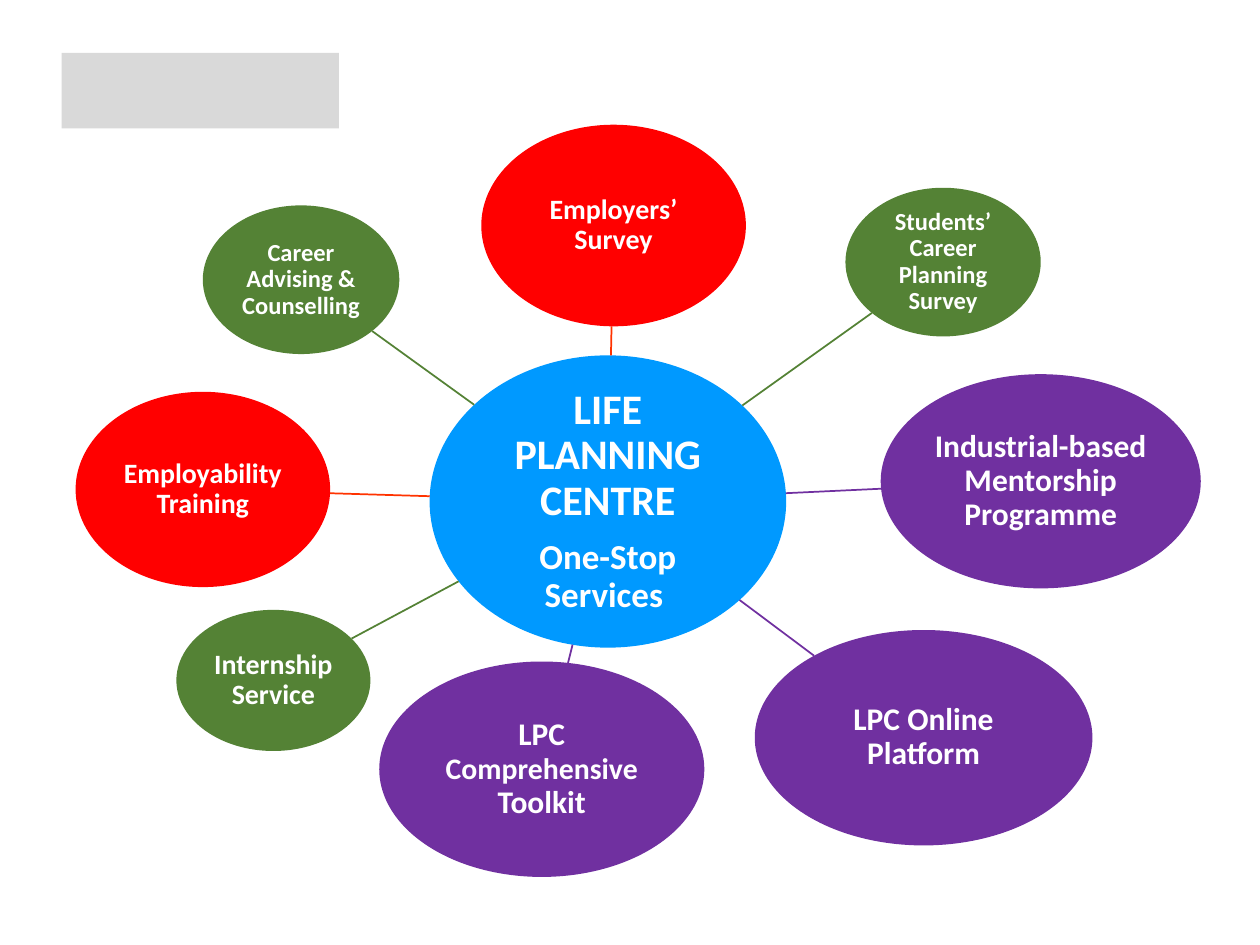
from collections import namedtuple
from dataclasses import dataclass
from math import hypot

from pptx import Presentation
from pptx.dml.color import RGBColor
from pptx.enum import shapes, text
from pptx.oxml.ns import qn
from pptx.util import Inches, Pt
from lxml import etree


@dataclass(frozen=True)
class Theme:
    hub: str = "0099FF"
    red: str = "FF0000"
    red_spoke: str = "FF3300"
    green: str = "548235"
    purple: str = "7030A0"
    placeholder: str = "D9D9D9"
    white: str = "FFFFFF"
    font: str = "Calibri"
    hub_name: int = 24
    hub_tagline: int = 20
    large: int = 18
    long_word: int = 17
    medium: int = 16
    small: int = 14


THEME = Theme()
Box = namedtuple("Box", "left top width height")
EMBLEM = Box(0.49, 0.42, 2.2, 0.6)
HUB = Box(3.41, 2.82, 2.83, 2.32)

# Each service: oval, fill, spoke colour, [(words, size), ...]
SERVICES = [
    (Box(3.82, 0.99, 2.1, 1.6), THEME.red, THEME.red_spoke,
     [("Employers’ Survey", THEME.medium)]),
    (Box(6.71, 1.49, 1.55, 1.18), THEME.green, THEME.green,
     [("Students’ Career Planning Survey", THEME.small)]),
    (Box(6.99, 2.97, 2.54, 1.7), THEME.purple, THEME.purple,
     [("Industrial-based Mentorship Programme", THEME.large)]),
    (Box(5.99, 5, 2.68, 1.71), THEME.purple, THEME.purple,
     [("LPC Online Platform", THEME.large)]),
    (Box(1.4, 4.84, 1.54, 1.12), THEME.green, THEME.green,
     [("Internship Service", THEME.medium)]),
    (Box(3.01, 5.25, 2.58, 1.71), THEME.purple, THEME.purple,
     [("LPC ", THEME.large), ("Comprehensive", THEME.long_word),
      (" Toolkit", THEME.large)]),
    (Box(0.6, 3.11, 2.02, 1.55), THEME.red, THEME.red_spoke,
     [("Employability Training", THEME.medium)]),
    (Box(1.61, 1.63, 1.56, 1.18), THEME.green, THEME.green,
     [("Career Advising & Counselling", THEME.small)]),
]


def add_filled_shape(slide, preset, box, fill):
    shape = slide.shapes.add_shape(preset, *(Inches(value) for value in box))
    shape.shadow.inherit = False
    shape.fill.solid()
    shape.fill.fore_color.rgb = RGBColor.from_string(fill)
    shape.line.fill.background()
    return shape


def add_words(paragraph, words, size):
    run = paragraph.add_run()
    run.text = words
    run.font.name = THEME.font
    run.font.size = Pt(size)
    run.font.bold = True
    run.font.color.rgb = RGBColor.from_string(THEME.white)


def add_oval(slide, oval, fill, paragraphs, inset):
    """Add a filled oval; each paragraph is a list of (words, size)."""
    shape = add_filled_shape(slide, shapes.MSO_SHAPE.OVAL, oval, fill)
    frame = shape.text_frame
    frame.word_wrap = True
    frame.vertical_anchor = text.MSO_ANCHOR.MIDDLE
    frame.margin_left = frame.margin_right = Inches(inset)
    frame.margin_top = frame.margin_bottom = Inches(inset)
    for index, parts in enumerate(paragraphs):
        paragraph = frame.add_paragraph() if index else frame.paragraphs[0]
        paragraph.alignment = text.PP_ALIGN.CENTER
        paragraph.line_spacing = 0.9
        paragraph.space_after = Pt(0.35 * parts[0][1])
        for words, size in parts:
            add_words(paragraph, words, size)


def center(oval):
    return oval.left + oval.width / 2, oval.top + oval.height / 2


def edge_point(oval, target):
    """Point where the ray from the oval's centre to target meets its edge."""
    x, y = center(oval)
    dx, dy = target[0] - x, target[1] - y
    scale = 1 / hypot(dx / (oval.width / 2), dy / (oval.height / 2))
    return Inches(x + dx * scale), Inches(y + dy * scale)


def add_spoke(slide, service, color):
    start = edge_point(HUB, center(service))
    end = edge_point(service, center(HUB))
    spoke = slide.shapes.add_connector(
        shapes.MSO_CONNECTOR.STRAIGHT, *start, *end)
    spoke.line.color.rgb = RGBColor.from_string(color)
    spoke.line.width = Pt(1)
    etree.SubElement(spoke._element.spPr, qn("a:effectLst"))


def main():
    prs = Presentation()
    prs.slide_width, prs.slide_height = Inches(10), Inches(7.5)
    slide = prs.slides.add_slide(prs.slide_layouts.get_by_name("Blank"))

    # Plain block in the emblem's place
    add_filled_shape(slide, shapes.MSO_SHAPE.RECTANGLE, EMBLEM,
                     THEME.placeholder)

    # Hub
    add_oval(slide, HUB, THEME.hub,
             [[("LIFE PLANNING CENTRE", THEME.hub_name)],
              [("One-Stop Services ", THEME.hub_tagline)]], inset=0.02)

    # Services around the hub
    for oval, fill, spoke_color, parts in SERVICES:
        add_spoke(slide, oval, spoke_color)
        add_oval(slide, oval, fill, [parts], inset=0.01)

    prs.save("out.pptx")


if __name__ == "__main__":
    main()
